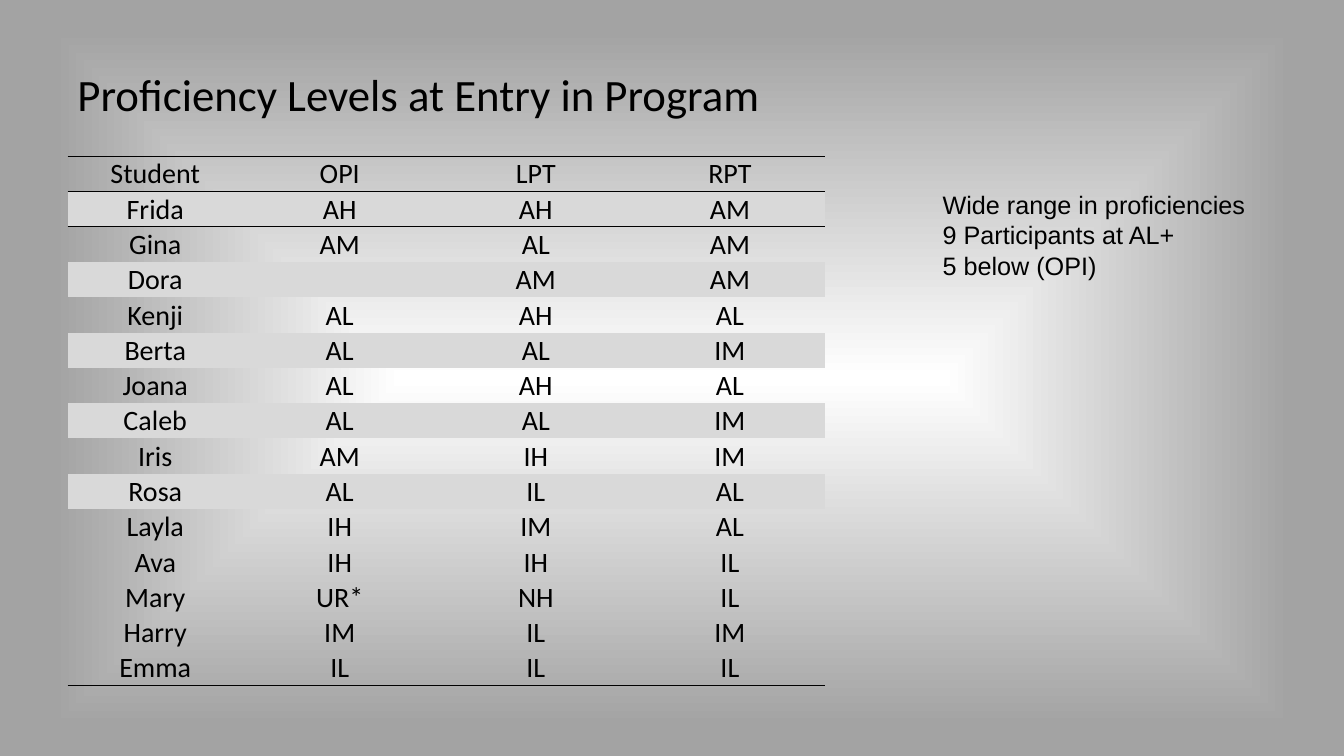
"""Build a slide with a table of proficiency levels at entry in a program."""
import pptx
import pptx.dml.color
import pptx.enum.text
import pptx.oxml
import pptx.util

RGB = pptx.dml.color.RGBColor
BLACK = RGB(0x00, 0x00, 0x00)
WHITE = RGB(0xFF, 0xFF, 0xFF)
BAND = RGB(0xD9, 0xD9, 0xD9)
EDGE = RGB(0xA3, 0xA3, 0xA3)
NS = 'xmlns:a="http://schemas.openxmlformats.org/drawingml/2006/main"'
PLAIN = "{2D5ABB26-0587-4C30-8999-92F81FD0307C}"
inch = pptx.util.Inches
ANCHOR = pptx.enum.text.MSO_ANCHOR


def style(frame, font, size):
    for para in frame.paragraphs:
        for run in para.runs:
            run.font.name = font
            run.font.size = pptx.util.Pt(size)
            run.font.color.rgb = BLACK


def label(slide, box, text, font, size, anchor):
    frame = slide.shapes.add_textbox(*map(inch, box)).text_frame
    frame.word_wrap = True
    frame.vertical_anchor = anchor
    frame.text = text
    style(frame, font, size)


deck = pptx.Presentation()
deck.slide_width, deck.slide_height = inch(13.33), inch(7.5)
slide = deck.slides.add_slide(deck.slide_layouts[6])

fill = slide.background.fill
fill.gradient()
for stop, color, place in zip(fill.gradient_stops, (WHITE, EDGE), (0, 0.92)):
    stop.color.rgb = color
    stop.position = place
line = slide.element.xpath(".//a:gradFill/a:lin")[0]
line.getparent().replace(line, pptx.oxml.parse_xml(
    f'<a:path {NS} path="shape">'
    '<a:fillToRect l="50000" t="50000" r="50000" b="50000"/></a:path>'))

label(slide, (0.67, 0.3, 12, 1.25), "Proficiency Levels at Entry in Program",
      "Calibri", 32, ANCHOR.MIDDLE)

rows = [row.split(",") for row in (
    "Student,OPI,LPT,RPT",
    "Frida,AH,AH,AM",
    "Gina,AM,AL,AM",
    "Dora,,AM,AM",
    "Kenji,AL,AH,AL",
    "Berta,AL,AL,IM",
    "Joana,AL,AH,AL",
    "Caleb,AL,AL,IM",
    "Iris,AM,IH,IM",
    "Rosa,AL,IL,AL",
    "Layla,IH,IM,AL",
    "Ava,IH,IH,IL",
    "Mary,UR*,NH,IL",
    "Harry,IM,IL,IM",
    "Emma,IL,IL,IL",
)]
wide = (1.74, 1.92, 1.97, 1.88)
high = 0.35
last = len(rows) - 1
table = slide.shapes.add_table(
    len(rows), len(wide), inch(0.67), inch(1.55),
    inch(sum(wide)), inch(high * len(rows))).table
table.first_row = table.horz_banding = False
table._tbl.xpath("./a:tblPr/a:tableStyleId")[0].text = PLAIN
for col, width in zip(table.columns, wide):
    col.width = inch(width)

for r, row in enumerate(rows):
    table.rows[r].height = inch(high)
    sides = {0: ("lnT", "lnB"), 1: ("lnT",), last: ("lnB",)}.get(r, ())
    for c, text in enumerate(row):
        cell = table.cell(r, c)
        cell.margin_left = cell.margin_right = cell.margin_top = inch(0.01)
        cell.margin_bottom = 0
        cell.vertical_anchor = ANCHOR.BOTTOM
        cell.text_frame.text = text
        cell.text_frame.paragraphs[0].alignment = pptx.enum.text.PP_ALIGN.CENTER
        style(cell.text_frame, "Calibri", 20)
        if r % 2 and r < 10:
            cell.fill.solid()
            cell.fill.fore_color.rgb = BAND
        else:
            cell.fill.background()
        for k, side in enumerate(sides):
            cell._tc.tcPr.insert(k, pptx.oxml.parse_xml(
                f'<a:{side} {NS} w="6350"><a:solidFill>'
                f'<a:srgbClr val="{BLACK}"/></a:solidFill></a:{side}>'))

label(slide, (9.25, 1.83, 3.58, 1.31),
      "Wide range in proficiencies\n9 Participants at AL+\n5 below (OPI)",
      "Arial", 18, ANCHOR.TOP)

deck.save("out.pptx")
